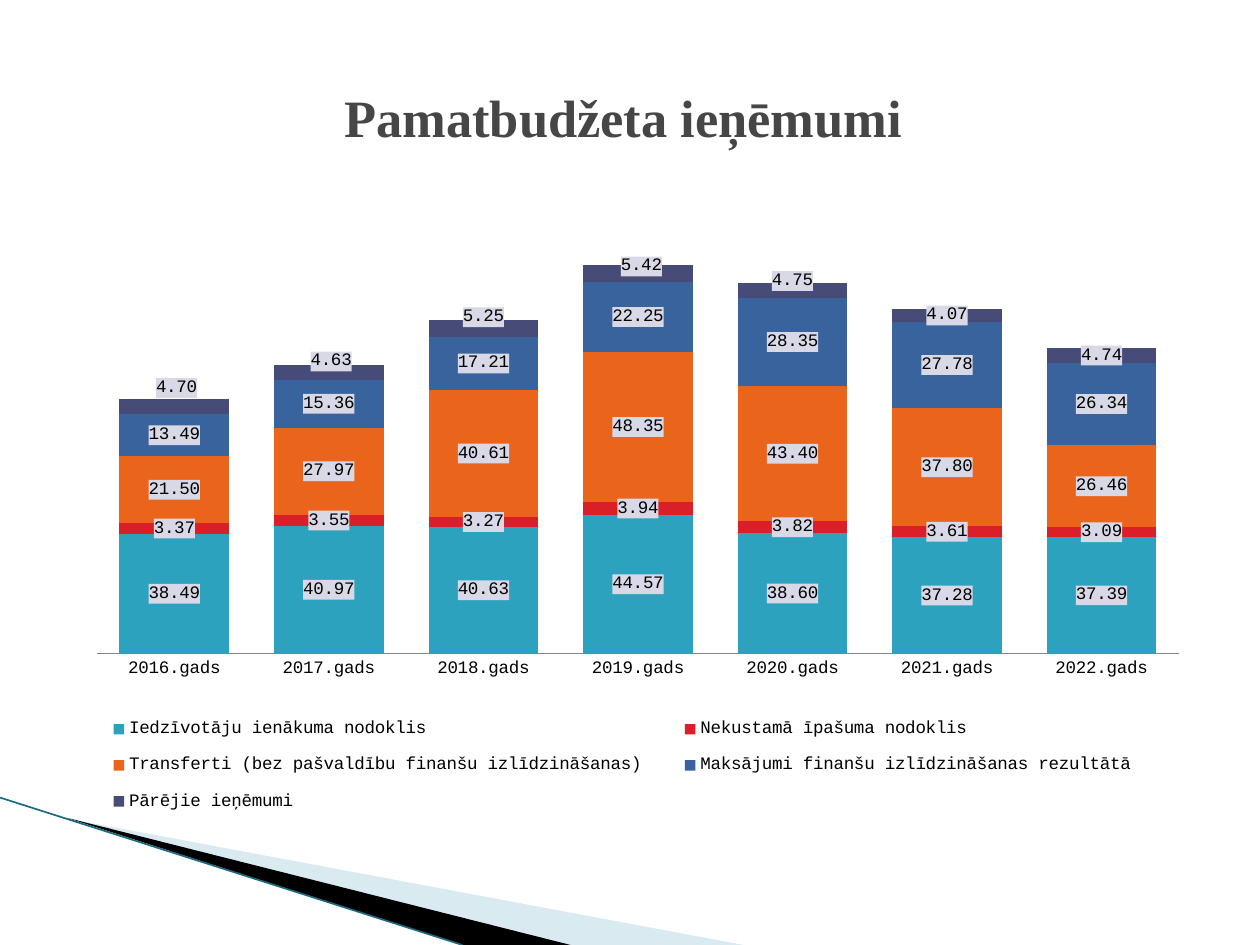
from dataclasses import dataclass
from typing import Optional

from lxml import etree
from pptx import Presentation
from pptx.chart.data import CategoryChartData
from pptx.dml.color import RGBColor
from pptx.enum import chart as ch, shapes, text
from pptx.oxml import parse_xml
from pptx.oxml.ns import nsdecls, qn
from pptx.util import Inches, Pt

W, H = 10, 7.5  # slide size in inches
BLACK = RGBColor(0x00, 0x00, 0x00)
GREY = RGBColor(0x46, 0x46, 0x46)
AXIS = RGBColor(0x86, 0x86, 0x86)
PALE = RGBColor(0xA0, 0xCB, 0xDC)
EDGE = RGBColor(0x1B, 0x6B, 0x80)
LABEL = RGBColor(0xD8, 0xD8, 0xE6)
TEAL = RGBColor(0x2D, 0xA2, 0xBF)
RED = RGBColor(0xDA, 0x1F, 0x28)
ORANGE = RGBColor(0xEB, 0x64, 0x1B)
BLUE = RGBColor(0x39, 0x63, 0x9D)
INDIGO = RGBColor(0x47, 0x4B, 0x78)


@dataclass
class Wedge:
    points: list  # inches
    color: RGBColor
    opacity: Optional[int] = None  # percent


@dataclass
class Income:
    name: str
    color: RGBColor
    values: list


YEARS = [f"{year}.gads" for year in range(2016, 2023)]
INCOMES = [
    Income("Iedzīvotāju ienākuma nodoklis", TEAL,
           [38.49, 40.97, 40.63, 44.57, 38.6, 37.28, 37.39]),
    Income("Nekustamā īpašuma nodoklis", RED,
           [3.37, 3.55, 3.27, 3.94, 3.82, 3.61, 3.09]),
    Income("Transferti (bez pašvaldību finanšu izlīdzināšanas)", ORANGE,
           [21.5, 27.97, 40.61, 48.35, 43.4, 37.8, 26.46]),
    Income("Maksājumi finanšu izlīdzināšanas rezultātā", BLUE,
           [13.49, 15.36, 17.21, 22.25, 28.35, 27.78, 26.34]),
    Income("Pārējie ieņēmumi", INDIGO,
           [4.7, 4.63, 5.25, 5.42, 4.75, 4.07, 4.74]),
]
# Offsets (x, y) of the top labels, in percent of the chart size
TOP_SHIFTS = [(0.2, -3), (0.2, -1.8), (0, -1.8), (0.3, -1.2), (0, -1.5)]
WEDGES = [
    Wedge([(0.55, 6.5), (5.9, H), (4.52, H)], PALE, 40),
    Wedge([(0.53, 6.49), (4.53, H), (3.67, H)], BLACK),
]


def write(tf, words: str, *, font: str, size: float, color: RGBColor,
          bold: bool = False, align=text.PP_ALIGN.CENTER) -> None:
    p = tf.paragraphs[0]
    p.alignment = align
    r = p.add_run()
    r.text = words
    r.font.name, r.font.size, r.font.bold = font, Pt(size), bold
    r.font.color.rgb = color


def draw_wedge(s, wedge: Wedge) -> None:
    start, *rest = [(Inches(x), Inches(y)) for x, y in wedge.points]
    builder = s.shapes.build_freeform(*start)
    builder.add_line_segments(rest, close=True)
    sp = builder.convert_to_shape()
    sp.shadow.inherit = False
    sp.fill.solid()
    sp.fill.fore_color.rgb = wedge.color
    sp.line.fill.background()
    if wedge.opacity is not None:
        clr = sp._element.spPr.find(".//" + qn("a:srgbClr"))
        etree.SubElement(clr, qn("a:alpha"), val=str(wedge.opacity * 1000))


def layout_xml(x: float, y: float, w: float = 0, h: float = 0,
               target: str = "", edge: bool = True):
    """Manual layout in percent of the chart; edge=False gives an offset."""
    parts = [f'<c:layoutTarget val="{target}"/>'] if target else []
    if edge:
        parts += ['<c:xMode val="edge"/>', '<c:yMode val="edge"/>']
    parts += [f'<c:x val="{x / 100}"/>', f'<c:y val="{y / 100}"/>']
    if edge:
        parts += [f'<c:w val="{w / 100}"/>', f'<c:h val="{h / 100}"/>']
    return parse_xml(f'<c:layout {nsdecls("c")}><c:manualLayout>'
                     f'{"".join(parts)}</c:manualLayout></c:layout>')


def label_fill():
    return parse_xml(f'<c:spPr {nsdecls("c", "a")}><a:solidFill>'
                     f'<a:srgbClr val="{LABEL}"/></a:solidFill></c:spPr>')


def format_labels(series) -> None:
    labels = series.data_labels
    labels.show_value = True
    labels.number_format = "0.00"
    labels.number_format_is_linked = False
    labels._element.find(qn("c:numFmt")).addnext(label_fill())


def shift_labels(series, shifts: list) -> None:
    for i in range(len(shifts)):
        series.points[i].data_label.position = ch.XL_LABEL_POSITION.CENTER
    for dl, (dx, dy) in zip(series.data_labels._element.findall(qn("c:dLbl")), shifts):
        num = parse_xml(f'<c:numFmt {nsdecls("c")} formatCode="0.00" sourceLinked="0"/>')
        after = dl.find(qn("c:idx"))
        for el in (layout_xml(dx, dy, edge=False), num, label_fill()):
            old = dl.find(el.tag)
            if old is not None:
                dl.remove(old)
            after.addnext(el)
            after = el


def draw_chart(s) -> None:
    data = CategoryChartData(number_format="0.00")
    data.categories = YEARS
    for income in INCOMES:
        data.add_series(income.name, income.values)
    chart = s.shapes.add_chart(
        ch.XL_CHART_TYPE.COLUMN_STACKED, Inches(0.05 * W), Inches(0.216 * H),
        Inches(0.9 * W), Inches(0.66 * H), data).chart
    chart.has_title = False
    chart.font.name, chart.font.size = "Courier New", Pt(10)
    chart.font.color.rgb = BLACK

    # Axes
    val, cat = chart.value_axis, chart.category_axis
    val.minimum_scale, val.maximum_scale = 0, 140
    val.has_major_gridlines = False
    val.visible = False
    cat.major_tick_mark = ch.XL_TICK_MARK.NONE
    cat.format.line.color.rgb = AXIS
    cat.format.line.width = Pt(0.75)

    # Columns
    plot = chart.plots[0]
    plot.gap_width, plot.overlap = 41, 100
    plot.vary_by_categories = False
    for series, income in zip(plot.series, INCOMES):
        series.format.fill.solid()
        series.format.fill.fore_color.rgb = income.color
        format_labels(series)
    shift_labels(plot.series[len(INCOMES) - 1], TOP_SHIFTS)

    # Legend and plot placement
    chart.has_legend = True
    legend = chart.legend
    legend.position = ch.XL_LEGEND_POSITION.TOP
    legend.include_in_layout = False
    area = chart._chartSpace.find(".//" + qn("c:plotArea"))
    for el in (area, legend._element):
        for old in el.findall(qn("c:layout")):
            el.remove(old)
    area.insert(0, layout_xml(3, 2.1, 95.4, 70, "inner"))
    legend._element.find(qn("c:legendPos")).addnext(
        layout_xml(1.1, 80, 96.4, 20))


def main() -> None:
    prs = Presentation()
    prs.slide_width, prs.slide_height = Inches(W), Inches(H)
    s = prs.slides.add_slide(prs.slide_layouts[5])

    # Corner decoration
    for wedge in WEDGES:
        draw_wedge(s, wedge)
    line = s.shapes.add_connector(shapes.MSO_CONNECTOR.STRAIGHT, 0, Inches(6.33),
                                  Inches(3.67), Inches(H))
    line.line.color.rgb, line.line.width = EDGE, Pt(0.95)
    etree.SubElement(line._element.spPr, qn("a:effectLst"))

    # Title
    title = s.shapes.title
    title.left, title.top = Inches(0.05 * W), Inches(0.04 * H)
    title.width, title.height = Inches(0.9 * W), Inches(1.25)
    title.text_frame.vertical_anchor = text.MSO_ANCHOR.MIDDLE
    write(title.text_frame, "Pamatbudžeta ieņēmumi ", font="Times New Roman",
          size=30, color=GREY, bold=True)

    draw_chart(s)
    prs.save("out.pptx")


if __name__ == "__main__":
    main()
